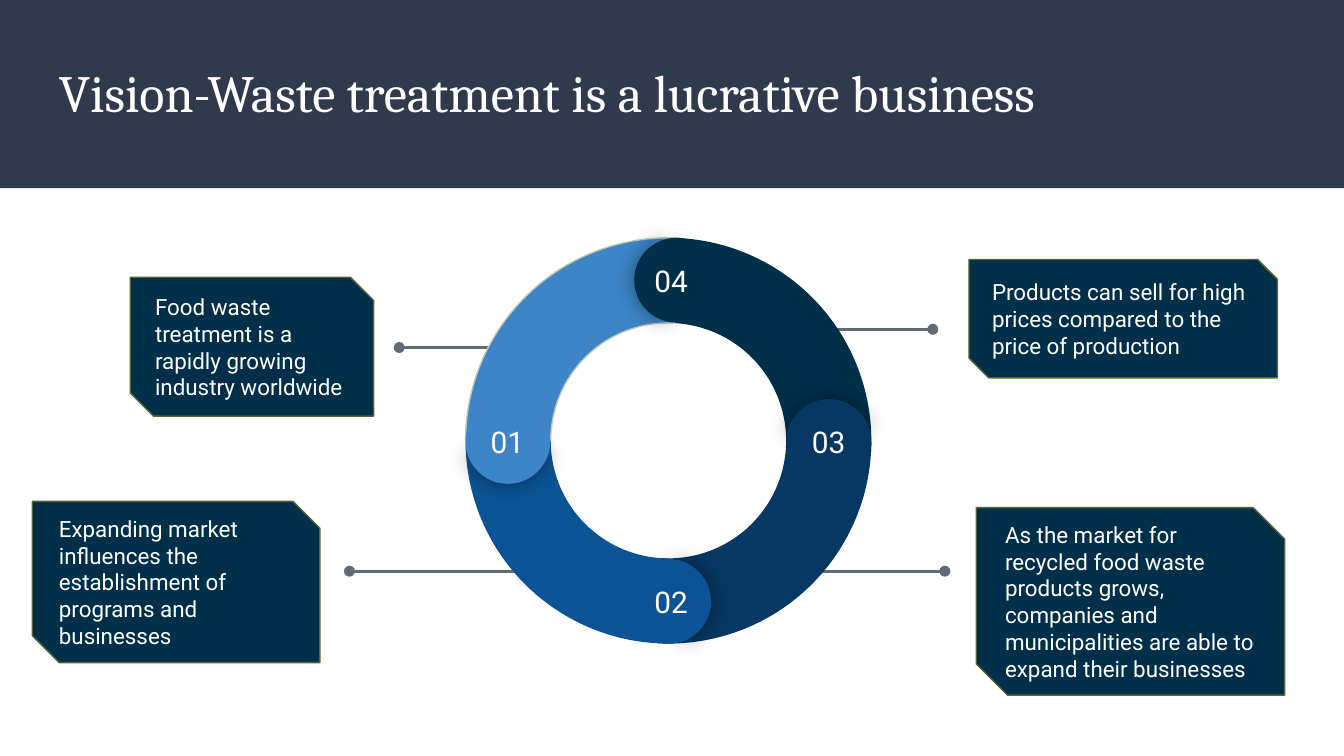
from dataclasses import dataclass

from lxml import etree
from pptx import Presentation
from pptx.dml.color import RGBColor
from pptx.enum.shapes import MSO_CONNECTOR, MSO_SHAPE
from pptx.enum.text import MSO_ANCHOR as Anchor, PP_ALIGN as Align
from pptx.oxml import parse_xml
from pptx.oxml.ns import nsdecls, qn
from pptx.util import Pt

WHITE = RGBColor(0xFF, 0xFF, 0xFF)
SLATE = RGBColor(0x31, 0x39, 0x4D)
NAVY = RGBColor(0x00, 0x2F, 0x4A)
DEEP_BLUE = RGBColor(0x07, 0x37, 0x63)
BLUE = RGBColor(0x0B, 0x53, 0x94)
LIGHT_BLUE = RGBColor(0x3D, 0x85, 0xC6)
OLIVE = RGBColor(0x58, 0x63, 0x3A)
PALE_GREEN = RGBColor(0xC0, 0xCC, 0xB7)
GREY = RGBColor(0x62, 0x6B, 0x73)

RING_X, RING_Y, RING_SIZE = 249.4, 127.4, 217.4
CAP_SIZE = 45.4
# Adjustments hold angles as degrees * 0.6
ARC_ADJ = (126.22, 181.77, 0.21)
CAP_BACK_ADJ = (61.9, 149.96)
CAP_FRONT_ADJ = (40.28, 171.84)


@dataclass(frozen=True)
class Segment:
    label: str
    color: RGBColor
    arc_rot: float
    cap_rot: float
    cap_x: float
    cap_y: float
    label_x: float
    outline: RGBColor | None = None


@dataclass(frozen=True)
class Callout:
    text: str
    x: float
    y: float
    w: float
    h: float
    line_y: float
    line_from: float
    line_to: float


# Stacked from back to front; each cap overlaps the segment next to it
SEGMENTS = [
    Segment("02", BLUE, 240, 180, 335.5, 299.5, 339.8),
    Segment("03", DEEP_BLUE, 150, 90, 421.3, 213.8, 424.1),
    Segment("04", NAVY, 60, 0, 339.8, 127.4, 339.8),
    Segment("01", LIGHT_BLUE, 330, 270, 249.4, 213.8, 252, PALE_GREEN),
]
CAP_ORDER = ("03", "02", "01", "04")

CALLOUTS = [
    Callout("Food waste treatment is a rapidly growing industry worldwide",
            69.8, 148.5, 130.4, 74.4, 186.2, 278, 213.9),
    Callout("Expanding market influences the establishment of programs and businesses",
            17.3, 268.6, 154.1, 86.4, 306, 290.2, 187.2),
    Callout("Products can sell for high prices compared to the price of production",
            519.1, 139, 165.2, 63.4, 176.4, 398.2, 499.7),
    Callout("As the market for recycled food waste products grows, companies and "
            "municipalities are able to expand their businesses",
            523, 272, 165.2, 100.4, 306, 405.4, 506.2),
]


def write(sp, text: str, size: float, font: str = "Roboto",
          align: Align = Align.LEFT, anchor: Anchor = Anchor.TOP) -> None:
    tf = sp.text_frame
    frame_format = {"word_wrap": True, "vertical_anchor": anchor}
    frame_format |= {f"margin_{side}": Pt(7.2)
                     for side in ("left", "top", "right", "bottom")}
    for name, value in frame_format.items():
        setattr(tf, name, value)
    p = tf.paragraphs[0]
    p.alignment = align
    r = p.add_run()
    r.text = text
    for name, value in {"size": Pt(size), "name": font}.items():
        setattr(r.font, name, value)
    r.font.color.rgb = WHITE


def add_shape(s, kind: MSO_SHAPE, x: float, y: float, w: float, h: float,
              fill: RGBColor, line: RGBColor | None = None,
              adj: tuple = (), rot: float = 0):
    sp = s.shapes.add_shape(kind, Pt(x), Pt(y), Pt(w), Pt(h))
    sp.shadow.inherit = False
    sp.rotation = rot
    for i, value in enumerate(adj):
        sp.adjustments[i] = value
    sp.fill.solid()
    sp.fill.fore_color.rgb = fill
    if line is None:
        sp.line.fill.background()
    else:
        sp.line.color.rgb = line
        sp.line.width = Pt(0.75)
    return sp


def add_text(s, x: float, y: float, w: float, h: float, *args, **fmt) -> None:
    write(s.shapes.add_textbox(Pt(x), Pt(y), Pt(w), Pt(h)), *args, **fmt)


def add_glow_shadow(sp) -> None:
    effects = sp._element.spPr.find(qn("a:effectLst"))
    effects.append(parse_xml(
        f'<a:outerShdw {nsdecls("a")} blurRad="{Pt(11.2)}" dist="0" dir="0" '
        'algn="ctr" rotWithShape="0"><a:srgbClr val="000000">'
        '<a:alpha val="43000"/></a:srgbClr></a:outerShdw>'))


def add_pointer(s, c: Callout) -> None:
    line = s.shapes.add_connector(MSO_CONNECTOR.STRAIGHT, Pt(c.line_from),
                                  Pt(c.line_y), Pt(c.line_to), Pt(c.line_y))
    line.line.color.rgb = GREY
    line.line.width = Pt(1.5)
    etree.SubElement(line.line._get_or_add_ln(), qn("a:tailEnd"), type="oval")
    etree.SubElement(line._element.spPr, qn("a:effectLst"))


def add_callout(s, c: Callout) -> None:
    sp = add_shape(s, MSO_SHAPE.SNIP_2_DIAG_RECTANGLE, c.x, c.y, c.w, c.h,
                   NAVY, OLIVE, (0, 0.167))
    write(sp, c.text, 12, anchor=Anchor.MIDDLE)


def add_arc(s, seg: Segment) -> None:
    add_shape(s, MSO_SHAPE.BLOCK_ARC, RING_X, RING_Y, RING_SIZE, RING_SIZE,
              seg.color, seg.outline, ARC_ADJ, seg.arc_rot)


def add_cap(s, seg: Segment) -> None:
    box = (seg.cap_x, seg.cap_y, CAP_SIZE, CAP_SIZE, seg.color)
    back = add_shape(s, MSO_SHAPE.PIE, *box, adj=CAP_BACK_ADJ,
                     rot=seg.cap_rot + 0.7)
    add_glow_shadow(back)
    add_shape(s, MSO_SHAPE.PIE, *box, adj=CAP_FRONT_ADJ,
              rot=(seg.cap_rot + 180) % 360)
    add_text(s, seg.label_x, seg.cap_y + 6, 39.6, 20.9, seg.label, 16,
             align=Align.CENTER)


def main() -> None:
    prs = Presentation()
    prs.slide_width, prs.slide_height = Pt(720), Pt(405)
    s = prs.slides.add_slide(prs.slide_layouts[6])

    # Header band and title
    add_shape(s, MSO_SHAPE.RECTANGLE, 0, 0, 720, 100.8, SLATE)
    add_text(s, 24.5, 25.2, 671, 49,
             "Vision-Waste treatment is a lucrative business", 28, "Cambria")

    # Callouts with their pointers
    for c in CALLOUTS:
        add_pointer(s, c)
        add_callout(s, c)

    # Ring, then the rounded caps with numbers
    for seg in SEGMENTS:
        add_arc(s, seg)
    by_label = {seg.label: seg for seg in SEGMENTS}
    for label in CAP_ORDER:
        add_cap(s, by_label[label])

    prs.save("out.pptx")


if __name__ == "__main__":
    main()
